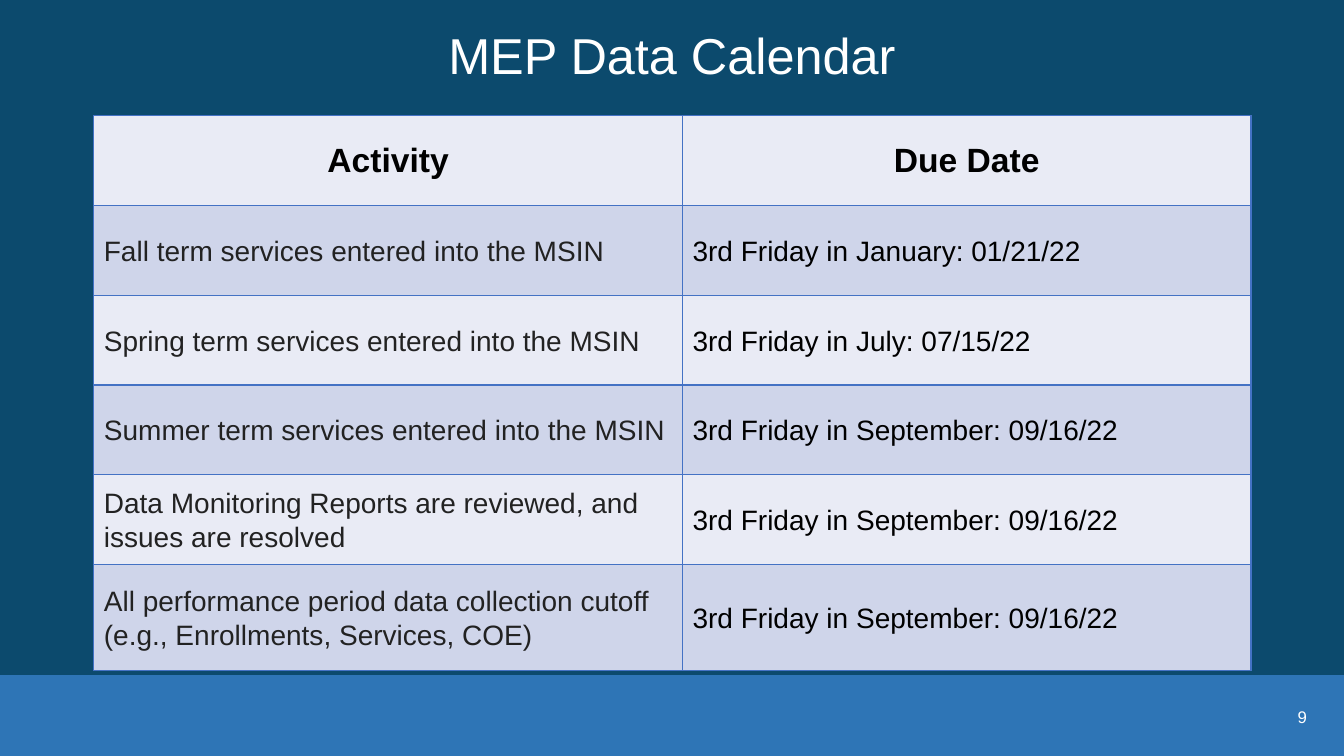
import pptx
import pptx.dml.color
import pptx.enum.shapes
import pptx.enum.text
import pptx.oxml
import pptx.oxml.ns
import pptx.util

COLORS = {
    "background": "0C4A6D",
    "band": "2E75B6",
    "border": "4472C4",
    "light_row": "E9EBF5",
    "dark_row": "CFD5EA",
    "white": "FFFFFF",
    "black": "000000",
    "activity": "222222",
}
ALIGN = pptx.enum.text.PP_ALIGN
MIDDLE = pptx.enum.text.MSO_ANCHOR.MIDDLE

SCHEDULE = [
    ("Activity", "Due Date"),
    ("Fall term services entered into the MSIN", "3rd Friday in January: 01/21/22"),
    ("Spring term services entered into the MSIN", "3rd Friday in July: 07/15/22"),
    ("Summer term services entered into the MSIN", "3rd Friday in September: 09/16/22"),
    ("Data Monitoring Reports are reviewed, and issues are resolved",
     "3rd Friday in September: 09/16/22"),
    ("All performance period data collection cutoff\n(e.g., Enrollments, Services, COE)",
     "3rd Friday in September: 09/16/22"),
]


class CalendarPage:
    """Draw styled elements on one slide, with lengths in percent of its size."""

    font = "Arial"

    def __init__(self, deck):
        self.deck = deck
        self.page = deck.slides.add_slide(deck.slide_layouts[6])
        self.paint(self.page.background.fill, "background")

    def across(self, share):
        return round(self.deck.slide_width * share / 100)

    def down(self, share):
        return round(self.deck.slide_height * share / 100)

    def area(self, left, top, width, height):
        return self.across(left), self.down(top), self.across(width), self.down(height)

    def paint(self, fill, color):
        fill.solid()
        fill.fore_color.rgb = pptx.dml.color.RGBColor.from_string(COLORS[color])

    def fill_text(self, frame, text, size, color, align, spacing=1.0, bold=False):
        frame.text = text
        frame.word_wrap = True
        for para in frame.paragraphs:
            para.alignment = align
            para.line_spacing = spacing
            for span in para.runs:
                span.font.name = self.font
                span.font.size = pptx.util.Pt(size)
                span.font.bold = bold
                span.font.color.rgb = pptx.dml.color.RGBColor.from_string(COLORS[color])

    def band(self, *place):
        kind = pptx.enum.shapes.MSO_SHAPE.RECTANGLE
        bar = self.page.shapes.add_shape(kind, *self.area(*place))
        bar.shadow.inherit = False
        self.paint(bar.fill, "band")
        bar.line.fill.background()

    def label(self, place, text, size, align, spacing=1.0):
        box = self.page.shapes.add_textbox(*self.area(*place))
        self.fill_text(box.text_frame, text, size, "white", align, spacing)
        box.text_frame.vertical_anchor = MIDDLE

    def border(self, cell, width=1):
        properties = cell._tc.get_or_add_tcPr()
        for index, side in enumerate(("lnL", "lnR", "lnT", "lnB")):
            line = pptx.oxml.parse_xml(
                f'<a:{side} {pptx.oxml.ns.nsdecls("a")} w="{pptx.util.Pt(width)}">'
                f'<a:solidFill><a:srgbClr val="{COLORS["border"]}"/></a:solidFill>'
                f'</a:{side}>')
            properties.insert(index, line)

    def table(self, left, top, widths, heights, rows):
        place = self.area(left, top, sum(widths), sum(heights))
        grid = self.page.shapes.add_table(len(rows), len(widths), *place).table
        grid.first_row = grid.horz_banding = False
        for column, width in zip(grid.columns, widths):
            column.width = self.across(width)
        for row, height in zip(grid.rows, heights):
            row.height = self.down(height)
        for row_index, texts in enumerate(rows):
            for column_index, text in enumerate(texts):
                cell = grid.cell(row_index, column_index)
                cell.vertical_anchor = MIDDLE
                self.paint(cell.fill, "dark_row" if row_index % 2 else "light_row")
                self.border(cell)
                if row_index == 0:
                    self.fill_text(cell.text_frame, text, 24, "black", ALIGN.CENTER, bold=True)
                    continue
                cell.margin_left = pptx.util.Inches(0.1)
                cell.margin_right = cell.margin_top = cell.margin_bottom = 0
                color = "black" if column_index else "activity"
                self.fill_text(cell.text_frame, text, 20, color, ALIGN.LEFT, 1.07)


def main():
    deck = pptx.Presentation()
    deck.slide_width = pptx.util.Inches(13.33)
    deck.slide_height = pptx.util.Inches(7.5)
    calendar = CalendarPage(deck)
    calendar.band(0, 89.3, 100, 10.7)
    calendar.label((94.45, 92.93, 3.53, 3.87), "9", 12, ALIGN.RIGHT)
    calendar.label((0, 0, 100, 15.33), "MEP Data Calendar", 36, ALIGN.CENTER, 0.9)
    calendar.table(6.98, 15.33, [43.8, 42.3], [11.87] * 5 + [14], SCHEDULE)
    deck.save("out.pptx")


if __name__ == "__main__":
    main()
